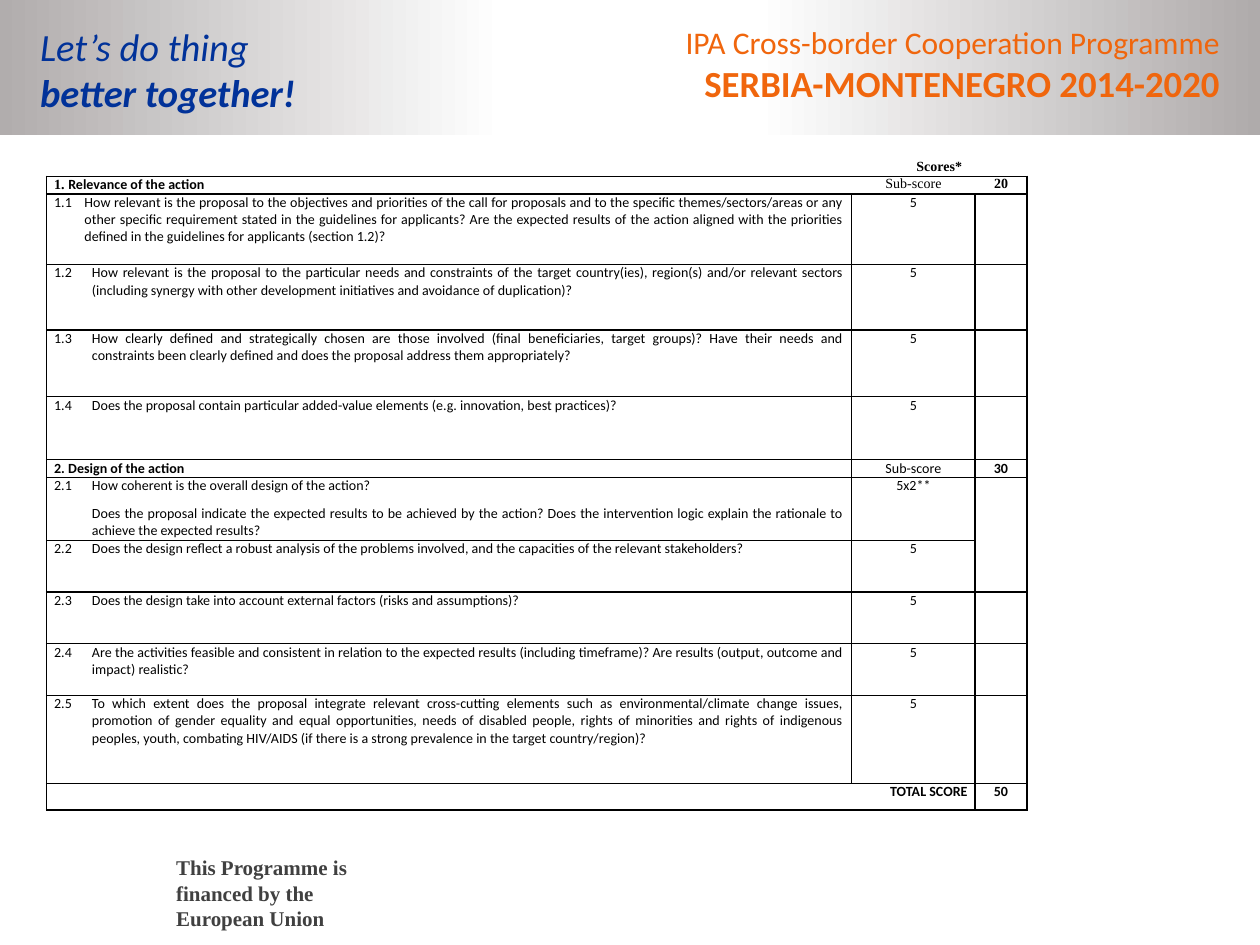
from lxml.etree import SubElement
from pptx import Presentation
from pptx.dml.color import RGBColor
from pptx.enum.shapes import MSO_SHAPE
from pptx.enum.text import MSO_ANCHOR, PP_ALIGN
from pptx.oxml.ns import qn
from pptx.util import Inches, Pt

COLORS = {"black": "000000", "blue": "013299", "orange": "F0660D", "gray": "404040"}
BAND_STOPS = [(0, "AFABAB"), (40, "FFFFFF"), (60, "FFFFFF"), (100, "B1ADAD")]
SANS, SERIF = "Calibri", "Times New Roman"

# Position, anchor, alignment, then (text, format) for each line
CAPTIONS = [
    ((1.3, 6.73, 1.56, 0.71), MSO_ANCHOR.MIDDLE, PP_ALIGN.LEFT, [
        ("This Programme is financed by the European Union",
         {"size": 12, "name": SERIF, "color": "gray", "bold": True})]),
    ((0.22, 0.13, 4.34, 0.84), MSO_ANCHOR.TOP, PP_ALIGN.LEFT, [
        ("Let’s do thing", {"size": 22, "color": "blue", "italic": True}),
        ("better together!", {"size": 22, "color": "blue", "italic": True, "bold": True})]),
    ((5.28, 0.13, 4.5, 0.76), MSO_ANCHOR.TOP, PP_ALIGN.RIGHT, [
        ("IPA Cross-border Cooperation Programme", {"size": 18, "color": "orange"}),
        ("SERBIA-MONTENEGRO 2014-2020", {"size": 21, "color": "orange", "bold": True})]),
]

# Row height, criterion, sub-score, score
ROWS = [
    (0.14, "", "Scores*", ""),
    (0.14, "1. Relevance of the action", "Sub-score", "20"),
    (0.56, "1.1\tHow relevant is the proposal to the objectives and priorities of the call for proposals and to the specific themes/sectors/areas or any other specific requirement stated in the guidelines for applicants? Are the expected results of the action aligned with the priorities defined in the guidelines for applicants (section 1.2)?", "5", ""),
    (0.52, "1.2\tHow relevant is the proposal to the particular needs and constraints of the target country(ies), region(s) and/or relevant sectors (including synergy with other development initiatives and avoidance of duplication)?", "5", ""),
    (0.53, "1.3\tHow clearly defined and strategically chosen are those involved (final beneficiaries, target groups)? Have their needs and constraints been clearly defined and does the proposal address them appropriately?", "5", ""),
    (0.5, "1.4\tDoes the proposal contain particular added-value elements (e.g. innovation, best practices)?", "5", ""),
    (0.14, "2. Design of the action", "Sub-score", "30"),
    (0.5, "2.1\tHow coherent is the overall design of the action?\nDoes the proposal indicate the expected results to be achieved by the action? Does the intervention logic explain the rationale to achieve the expected results?", "5x2**", ""),
    (0.41, "2.2\tDoes the design reflect a robust analysis of the problems involved, and the capacities of the relevant stakeholders?", "5", ""),
    (0.41, "2.3\tDoes the design take into account external factors (risks and assumptions)?", "5", ""),
    (0.41, "2.4\tAre the activities feasible and consistent in relation to the expected results (including timeframe)? Are results (output, outcome and impact) realistic?", "5", ""),
    (0.7, "2.5\tTo which extent does the proposal integrate relevant cross-cutting elements such as environmental/climate change issues, promotion of gender equality and equal opportunities, needs of disabled people, rights of minorities and rights of indigenous peoples, youth, combating HIV/AIDS (if there is a strong prevalence in the target country/region)?", "5", ""),
    (0.21, "TOTAL SCORE", "", "50"),
]
COLUMNS = [6.39, 0.98, 0.41]
MERGES = [((0, 1), (0, 2)), ((7, 2), (8, 2)), ((12, 0), (12, 1))]
SCORES_ROW, RELEVANCE_ROW, TOTAL_ROW = 0, 1, len(ROWS) - 1


def add_run(paragraph, text, size, color="black", name=SANS, **styles):
    run = paragraph.add_run()
    run.text = text
    run.font.color.rgb = RGBColor.from_string(COLORS[color])
    for attribute, value in {"size": Pt(size), "name": name, **styles}.items():
        setattr(run.font, attribute, value)


def add_band(slide):
    band = slide.shapes.add_shape(MSO_SHAPE.RECTANGLE, 0, 0, Inches(10), Inches(1.07))
    band.shadow.inherit = False
    band.line.fill.background()
    band.fill.gradient()
    band.fill.gradient_angle = 180
    stops = band._element.spPr.find(qn("a:gradFill")).find(qn("a:gsLst"))
    for old_stop in list(stops):
        stops.remove(old_stop)
    for percent, color in BAND_STOPS:
        stop = SubElement(stops, qn("a:gs"), pos=str(percent * 1000))
        SubElement(stop, qn("a:srgbClr"), val=color)


def add_caption(slide, position, anchor, alignment, lines):
    frame = slide.shapes.add_textbox(*map(Inches, position)).text_frame
    frame.word_wrap = True
    frame.vertical_anchor = anchor
    for index, (text, styles) in enumerate(lines):
        paragraph = frame.add_paragraph() if index else frame.paragraphs[0]
        paragraph.alignment = alignment
        add_run(paragraph, text, **styles)


def bordered_sides(row, column):
    """Scores row has only a rule below; the relevance row has no inner uprights."""
    if row == SCORES_ROW:
        return "B"
    sides = "TB"
    if column == 0 or (row != RELEVANCE_ROW and (row, column) != (TOTAL_ROW, 1)):
        sides += "L"
    if column == 2 or (row != RELEVANCE_ROW and (row, column) != (TOTAL_ROW, 0)):
        sides += "R"
    return sides


def format_cell(cell, row, column):
    for side, margin in {"left": 0.06, "right": 0.06, "top": 0, "bottom": 0}.items():
        setattr(cell, f"margin_{side}", Inches(margin))
    properties = cell._tc.get_or_add_tcPr()
    for side in "LRTB":
        line = SubElement(properties, qn(f"a:ln{side}"), w=str(Pt(1)))
        if side in bordered_sides(row, column):
            fill = SubElement(line, qn("a:solidFill"))
            SubElement(fill, qn("a:srgbClr"), val=COLORS["black"])
        else:
            SubElement(line, qn("a:noFill"))
    cell.fill.background()


def fill_cell(cell, text, row, column):
    if not text:
        SubElement(cell.text_frame.paragraphs[0]._p, qn("a:endParaRPr"), sz="800")
        return
    is_heading = column == 0 and "\t" not in text
    bold = is_heading or column == 2 or row == SCORES_ROW
    font = SERIF if column and row <= RELEVANCE_ROW else SANS
    for index, line in enumerate(text.split("\n")):
        paragraph = cell.text_frame.add_paragraph() if index else cell.text_frame.paragraphs[0]
        paragraph.alignment = PP_ALIGN.CENTER if column else PP_ALIGN.JUSTIFY
        if row == TOTAL_ROW and column == 0:
            paragraph.alignment = PP_ALIGN.RIGHT
        if index:
            paragraph.space_before = Pt(6)
        if column == 0 and not is_heading:
            indent = Inches(0.24 if row == RELEVANCE_ROW + 1 else 0.3)
            margins = paragraph._p.get_or_add_pPr()
            margins.set("marL", str(indent))
            margins.set("indent", str(0 if index else -indent))
        if row == RELEVANCE_ROW and column == 0:
            number, line = line[:3], line[3:]
            add_run(paragraph, number, 8, name=SERIF, bold=True)
        add_run(paragraph, line, 8, name=font, bold=bold)


def add_score_table(slide):
    heights = [height for height, *_ in ROWS]
    table = slide.shapes.add_table(
        len(ROWS), len(COLUMNS), Inches(0.37), Inches(1.26),
        Inches(sum(COLUMNS)), Inches(sum(heights))).table
    table.first_row = table.horz_banding = False
    for column, width in zip(table.columns, COLUMNS):
        column.width = Inches(width)
    for row, (height, *texts) in enumerate(ROWS):
        table.rows[row].height = Inches(height)
        for column, text in enumerate(texts):
            cell = table.cell(row, column)
            format_cell(cell, row, column)
            fill_cell(cell, text, row, column)
    for first, last in MERGES:
        table.cell(*first).merge(table.cell(*last))


def main():
    presentation = Presentation()
    presentation.slide_width, presentation.slide_height = Inches(10), Inches(7.5)
    slide = presentation.slides.add_slide(presentation.slide_layouts[6])
    add_band(slide)
    for caption in CAPTIONS:
        add_caption(slide, *caption)
    add_score_table(slide)
    presentation.save("out.pptx")


if __name__ == "__main__":
    main()
